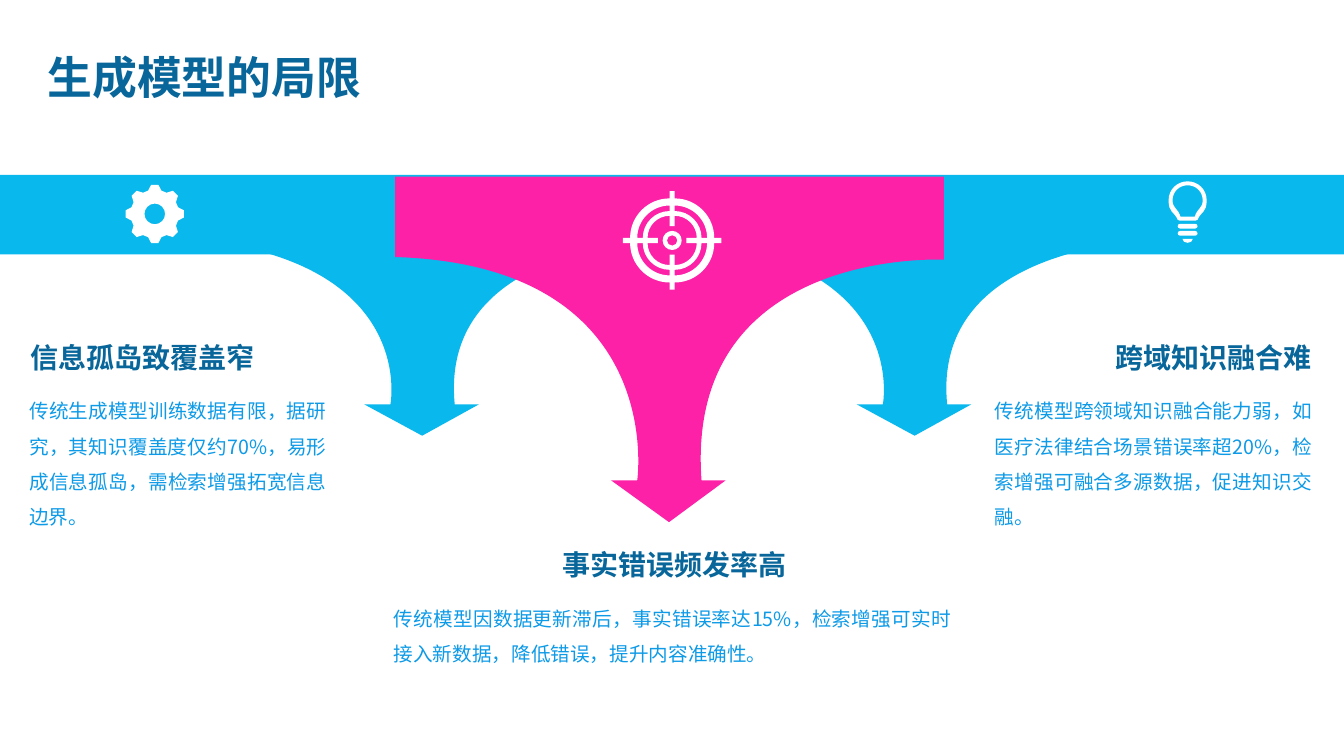
"""Build the slide on the limits of generative models."""
from dataclasses import dataclass
from math import cos, radians, sin

from lxml import etree
from pptx import Presentation
from pptx import util as u
from pptx.dml import color
from pptx.enum import shapes, text
from pptx.oxml import ns

Point = tuple[float, float]
Step = tuple[Point, ...]
Contour = list[Step]
Align = text.PP_ALIGN
Anchor = text.MSO_ANCHOR


@dataclass(frozen=True)
class Theme:
    """Colours, font and type sizes of the slide."""
    blue: str = "09B8ED"
    pink: str = "FC21A7"
    white: str = "FFFFFF"
    heading: str = "08669A"
    body: str = "0D9AE7"
    font: str = "Noto Sans CJK SC"
    title_size: int = 32
    heading_size: int = 20
    body_size: int = 14


@dataclass(frozen=True)
class Arrow:
    """A funnel-shaped arrow hanging from the band."""
    left: float
    fill: str
    stretch: float = 1


@dataclass(frozen=True)
class Limit:
    """A heading with its explanation."""
    heading: str
    body: str
    heading_left: float
    heading_width: float
    left: float
    top: float
    width: float
    height: float
    align: Align


THEME = Theme()
PAGE_WIDTH, PAGE_HEIGHT = 33.87, 19.05
BAND_TOP, BAND_HEIGHT, ARROW_TOP = 4.41, 2.0, 4.45
ROUND = 0.55
ARROW_OUTLINE: Contour = [
    ((0, 0),), ((13.83, 0),), ((13.83, 1.57),),
    ((13.83, 1.57), (7.29, 1.32), (7.72, 5.74)),
    ((8.33, 5.74),), ((6.9, 6.53),), ((5.44, 5.74),), ((6.1, 5.74),),
    ((6.1, 5.74), (6.88, 1.68), (0, 1.52)),
]
BULB_GLASS: Contour = [
    ((0, 0),), ((0.26, 0), (0.48, 0.2), (0.48, 0.48)),
    ((0.48, 0.8), (0.34, 0.75), (0.25, 0.97)), ((0.2, 0.99),), ((0, 0.99),),
]
BULB_HOLLOW: Contour = [
    ((0, 0.1),), ((0.21, 0.1), (0.38, 0.26), (0.38, 0.48)),
    ((0.38, 0.68), (0.24, 0.68), (0.18, 0.89)), ((0, 0.89),),
]
BULB_FOOT: Contour = [
    ((0, 1.45),), ((0.13, 1.45),), ((0.13, 1.51), (0.07, 1.55), (0, 1.55)),
]
ARROWS = [
    Arrow(3.74, THEME.blue),
    Arrow(16.15, THEME.blue),
    Arrow(9.96, THEME.pink, 4 / 3),
]
LIMITS = [
    Limit("信息孤岛致覆盖窄",
          "传统生成模型训练数据有限，据研究，其知识覆盖度仅约70%，易形成信息孤岛，需检索增强拓宽信息边界。",
          0.51, 7.95, 0.49, 8.46, 7.99, 6.96, Align.LEFT),
    Limit("跨域知识融合难",
          "传统模型跨领域知识融合能力弱，如医疗法律结合场景错误率超20%，检索增强可融合多源数据，促进知识交融。",
          24.82, 8.48, 24.82, 8.46, 8.5, 6.96, Align.RIGHT),
    Limit("事实错误频发率高",
          "传统模型因数据更新滞后，事实错误率达15%，检索增强可实时接入新数据，降低错误，提升内容准确性。",
          11.92, 10.16, 9.67, 13.69, 14.55, 3.71, Align.CENTER),
]


def paint(shape, fill: str) -> None:
    """Give a shape a plain fill with no line or shadow."""
    shape.shadow.inherit = False
    shape.fill.solid()
    shape.fill.fore_color.rgb = color.RGBColor.from_string(fill)
    shape.line.fill.background()


def mirror(half: Contour) -> Contour:
    """Complete a right half with its left half."""
    back = [tuple((-x, y) for x, y in (*reversed(step[:-1]), before[-1]))
            for before, step in zip(half, half[1:])]
    return half + back[::-1]


def turn(contour: Contour, quarters: int) -> Contour:
    """Turn a contour clockwise by quarter turns."""
    for _ in range(quarters):
        contour = [tuple((-y, x) for x, y in step) for step in contour]
    return contour


def quarter(radius: float, gap: float = 0) -> Step:
    """Curve from the top of a circle to its right, leaving a gap at each axis."""
    middle = gap + ROUND * (radius - gap)
    return (middle, -radius), (radius, -middle), (radius, -gap)


def circle(radius: float) -> Contour:
    """Return a circle around the origin."""
    return [((0, -radius),)] + [turn([quarter(radius)], index)[0] for index in range(4)]


def crossed_circle(radius: float, reach: float, gap: float) -> Contour:
    """Return a circle whose edge steps to another reach along both axes."""
    corner = [((gap, -reach),), ((gap, -radius),), quarter(radius, gap), ((reach, -gap),)]
    return [step for index in range(4) for step in turn(corner, index)]


def add_outline(page, left: float, top: float, contours: list[Contour], fill: str) -> None:
    """Draw closed contours of lines and curves as one shape."""
    placed = [[(u.Cm(left + x), u.Cm(top + y)) for step in contour for x, y in step]
              for contour in contours]
    builder = page.shapes.build_freeform(*placed[0][0])
    for index, points in enumerate(placed):
        if index:
            builder.move_to(*points[0])
        builder.add_line_segments(points[1:], close=True)
    shape = builder.convert_to_shape()
    lines = shape._element.iter(ns.qn("a:lnTo"))
    segments = iter(list(lines))
    for step in (step for contour in contours for step in contour[1:]):
        first, *others = [next(segments) for _ in step]
        if others:
            first.tag = ns.qn("a:cubicBezTo")
            for other in others:
                first.append(other[0])
                other.getparent().remove(other)
    paint(shape, fill)


def add_text(page, content: str, left: float, top: float, width: float, height: float, *,
             size: int, ink: str, bold: bool = False, align: Align = Align.LEFT,
             anchor: Anchor = Anchor.MIDDLE, spacing: float = 1, after: int = 0) -> None:
    """Write one paragraph in a text box."""
    box = page.shapes.add_textbox(u.Cm(left), u.Cm(top), u.Cm(width), u.Cm(height))
    box.text_frame.word_wrap = True
    box.text_frame.vertical_anchor = anchor
    para = box.text_frame.paragraphs[0]
    para.alignment, para.line_spacing, para.space_after = align, spacing, u.Pt(after)
    span = para.add_run()
    span.text = content
    span.font.size, span.font.bold, span.font.name = u.Pt(size), bold, THEME.font
    span.font.color.rgb = color.RGBColor.from_string(ink)
    properties = span._r.get_or_add_rPr()
    properties.set("lang", "zh-CN")
    etree.SubElement(properties, ns.qn("a:ea")).set("typeface", THEME.font)


def add_gear(page, x: float, y: float) -> None:
    """Draw the eight-toothed gear around a centre."""
    tooth = ((-16, 0.61), (-7, 0.74), (7, 0.74), (16, 0.61))
    rim: Contour = [((radius * sin(radians(45 * index + angle)),
                      -radius * cos(radians(45 * index + angle))),)
                    for index in range(8) for angle, radius in tooth]
    add_outline(page, x, y, [rim, circle(0.26)], THEME.white)


def add_target(page, x: float, y: float) -> None:
    """Draw the crosshair target around a centre."""
    gap, outer, inner = 0.065, 0.88, 0.74
    right, left, end = quarter(inner, gap)
    slot = [((gap, -outer),), quarter(outer, gap), (end,), (left, right, (gap, -inner))]
    contours = [crossed_circle(1.06, 1.24, gap), crossed_circle(0.62, 0.36, gap),
                circle(0.24), circle(0.13)]
    contours += [turn(slot, index) for index in range(4)]
    add_outline(page, x, y, contours, THEME.white)


def add_bulb(page, x: float, y: float) -> None:
    """Draw the light bulb below its top point."""
    bars = [[((0, top),), ((0.19, top),),
             ((0.27, top), (0.27, top + 0.12), (0.19, top + 0.12)), ((0, top + 0.12),)]
            for top in (1.07, 1.25)]
    halves = [BULB_GLASS, BULB_HOLLOW, *bars, BULB_FOOT]
    add_outline(page, x, y, [mirror(half) for half in halves], THEME.white)


def main() -> None:
    """Build and save the deck."""
    deck = Presentation()
    deck.slide_width, deck.slide_height = u.Cm(PAGE_WIDTH), u.Cm(PAGE_HEIGHT)
    page = deck.slides.add_slide(deck.slide_layouts[6])
    add_text(page, "生成模型的局限", 0.95, 0.79, 31.93, 2, size=THEME.title_size,
             ink=THEME.heading, bold=True, spacing=1.2)
    band = page.shapes.add_shape(shapes.MSO_SHAPE.RECTANGLE, 0, u.Cm(BAND_TOP),
                                 u.Cm(PAGE_WIDTH), u.Cm(BAND_HEIGHT))
    paint(band, THEME.blue)
    for arrow in ARROWS:
        outline = [tuple((x, y * arrow.stretch) for x, y in step) for step in ARROW_OUTLINE]
        add_outline(page, arrow.left, ARROW_TOP, [outline], arrow.fill)
    for limit in LIMITS:
        add_text(page, limit.body, limit.left, limit.top + 1.18, limit.width, limit.height,
                 size=THEME.body_size, ink=THEME.body, align=Align.JUSTIFY,
                 anchor=Anchor.TOP, spacing=1.5, after=3)
        add_text(page, limit.heading, limit.heading_left, limit.top, limit.heading_width, 1.07,
                 size=THEME.heading_size, ink=THEME.heading, bold=True, align=limit.align)
    add_target(page, 16.94, 6.06)
    add_gear(page, 3.9, 5.39)
    add_bulb(page, 29.93, 4.57)
    deck.save("out.pptx")


if __name__ == "__main__":
    main()
